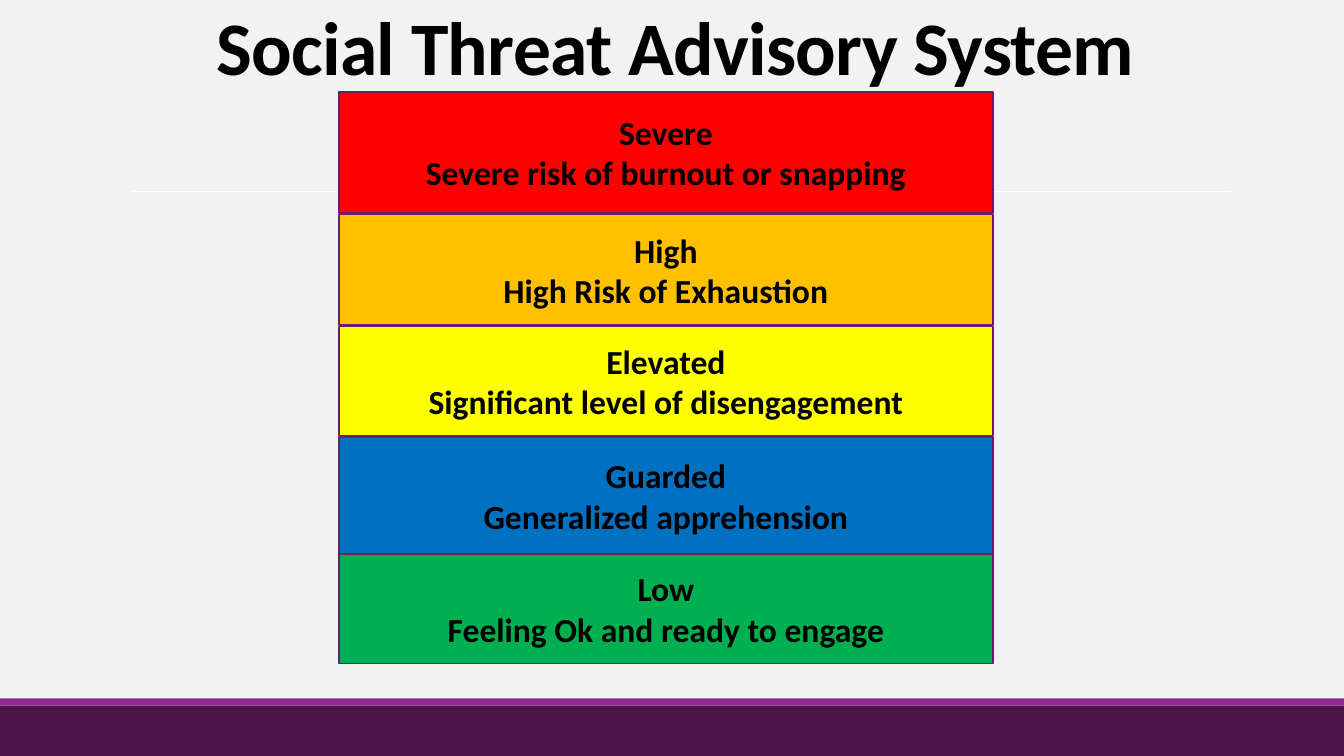
"""Build the Social Threat Advisory System slide."""
from lxml import etree
from pptx import Presentation
from pptx.dml.color import RGBColor
from pptx.enum import shapes, text
from pptx.oxml.ns import qn
from pptx.util import Pt

FONT = "Calibri"
COLORS = {
    "background": "F2F2F2",
    "footer": "491447",
    "accent": "92278F",
    "rule": "FFFFFF",
    "border": "6C1D6A",
    "text": "000000",
    "severe": "FF0000",
    "high": "FFC000",
    "elevated": "FFFF00",
    "guarded": "0070C0",
    "low": "00B050",
}
LEVELS = [
    ("Severe", "Severe risk of burnout or snapping", 65.6, 86.4),
    ("High", "High Risk of Exhaustion", 153.2, 79),
    ("Elevated", "Significant level of disengagement", 233.2, 77.8),
    ("Guarded", "Generalized apprehension", 312.3, 83.5),
    ("Low", "Feeling Ok and ready to engage", 395.6, 78.4),
]


def rgb(name):
    """Return the named colour."""
    return RGBColor.from_string(COLORS[name])


def format_text(tf, size):
    """Centre every paragraph and set its runs in bold."""
    for p in tf.paragraphs:
        p.alignment = text.PP_ALIGN.CENTER
        for r in p.runs:
            r.font.name = FONT
            r.font.size = Pt(size)
            r.font.bold = True
            r.font.color.rgb = rgb("text")


def add_rect(s, left, top, width, height, fill, border=None):
    """Add a flat rectangle with an optional border."""
    sp = s.shapes.add_shape(shapes.MSO_SHAPE.RECTANGLE,
                            Pt(left), Pt(top), Pt(width), Pt(height))
    sp.shadow.inherit = False
    sp.fill.solid()
    sp.fill.fore_color.rgb = rgb(fill)
    if border:
        sp.line.color.rgb = rgb(border)
        sp.line.width = Pt(1.25)
    else:
        sp.line.fill.background()
    return sp


def add_rule(s, left, right, top):
    """Add a thin horizontal line."""
    line = s.shapes.add_connector(shapes.MSO_CONNECTOR.STRAIGHT,
                                  Pt(left), Pt(top), Pt(right), Pt(top))
    line.line.color.rgb = rgb("rule")
    line.line.width = Pt(0.5)
    etree.SubElement(line._element.spPr, qn("a:effectLst"))


def set_title(s, wording):
    """Place and format the title placeholder."""
    sp = s.shapes.title
    sp.left, sp.top, sp.width, sp.height = Pt(86.4), Pt(22.3), Pt(792), Pt(46)
    tf = sp.text_frame
    tf.text = wording
    tf.word_wrap = True
    tf.auto_size = text.MSO_AUTO_SIZE.NONE
    tf.vertical_anchor = text.MSO_ANCHOR.BOTTOM
    format_text(tf, 54)
    p = tf.paragraphs[0]
    p.line_spacing = 0.85
    p.runs[0].font._element.set("spc", "-50")


def add_level(s, name, meaning, top, height):
    """Add one threat level with its name and meaning."""
    sp = add_rect(s, 242, top, 467.3, height, name.lower(), "border")
    tf = sp.text_frame
    tf.text = f"{name}\n{meaning}"
    tf.word_wrap = True
    tf.vertical_anchor = text.MSO_ANCHOR.MIDDLE
    format_text(tf, 24)


def main():
    """Build and save the slide."""
    prs = Presentation()
    prs.slide_width, prs.slide_height = Pt(960), Pt(540)
    s = prs.slides.add_slide(prs.slide_layouts[5])
    s.background.fill.solid()
    s.background.fill.fore_color.rgb = rgb("background")
    add_rect(s, 0, 504, 960, 36, "footer")
    add_rect(s, 0, 498.8, 960, 5.2, "accent")
    add_rule(s, 94.3, 879, 136.6)
    set_title(s, "Social Threat Advisory System")
    for level in LEVELS:
        add_level(s, *level)
    prs.save("out.pptx")


if __name__ == "__main__":
    main()
